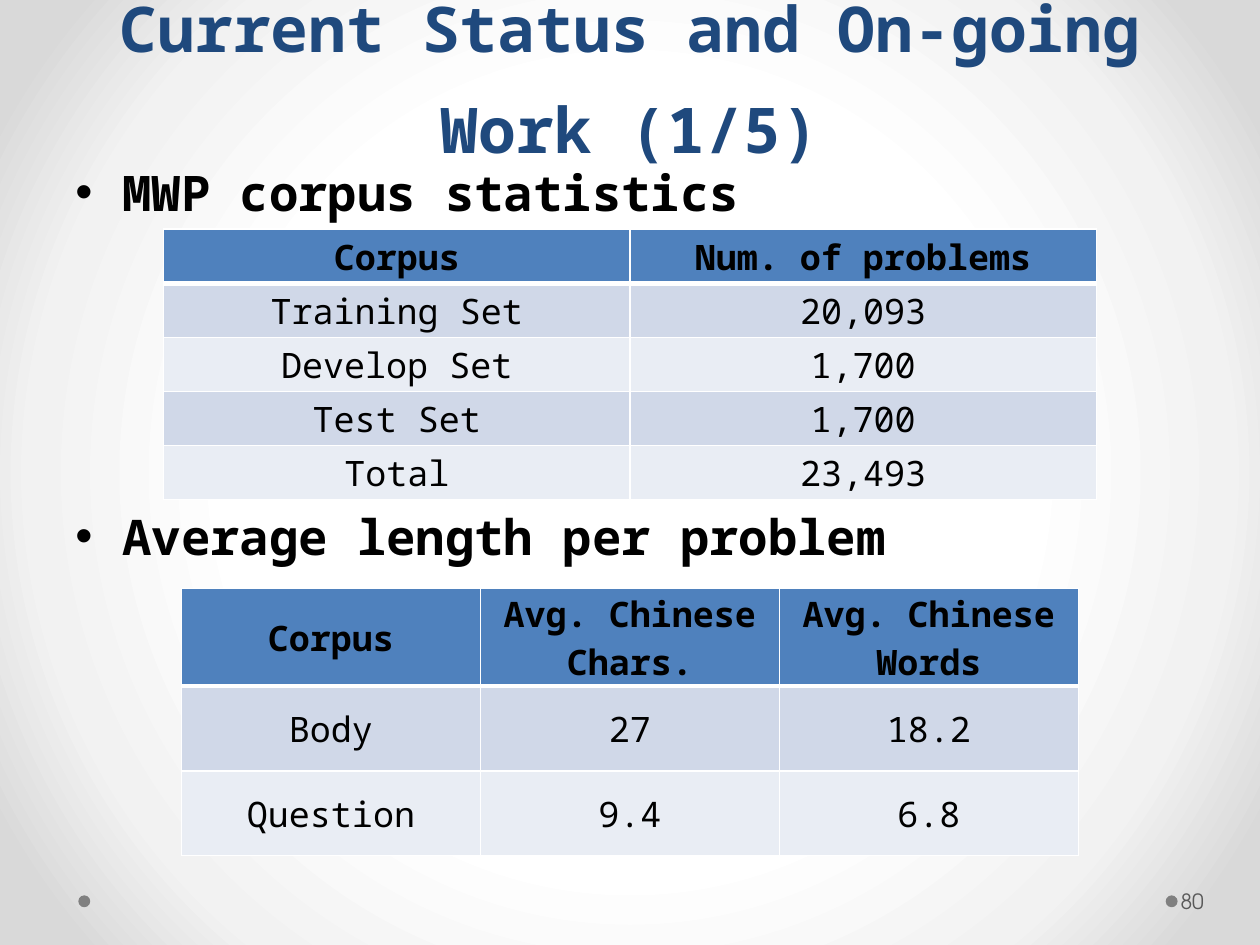
from pptx import Presentation
from pptx.dml.color import RGBColor
from pptx.enum.shapes import MSO_SHAPE
from pptx.enum.text import MSO_ANCHOR as ANCHOR, PP_ALIGN as ALIGN
from pptx.oxml import parse_xml
from pptx.oxml.ns import nsdecls
from pptx.util import Cm, Pt

WHITE = RGBColor(0xFF, 0xFF, 0xFF)
PALE = RGBColor(0xF2, 0xF2, 0xF2)
SILVER = RGBColor(0xD9, 0xD9, 0xD9)
GREY = RGBColor(0x80, 0x80, 0x80)
DARK_GREY = RGBColor(0x59, 0x59, 0x59)
BLACK = RGBColor(0, 0, 0)
NAVY = RGBColor(0x1F, 0x49, 0x7D)
HEADER = RGBColor(0x4F, 0x81, 0xBD)
BANDS = (RGBColor(0xD0, 0xD8, 0xE8), RGBColor(0xE9, 0xED, 0xF4))

MONO = "Noto Sans Mono"
TITLE = dict(name=MONO, size=Pt(36), bold=True, color=NAVY)
BULLET = dict(name=MONO, size=Pt(28), bold=True, color=BLACK)
HEAD_CELL = dict(name=MONO, size=Pt(20), bold=True, color=BLACK)
BODY_CELL = dict(HEAD_CELL, bold=False)
NUMBER = dict(name="TeX Gyre Adventor", size=Pt(12), bold=False, color=DARK_GREY)

CORPUS_SIZES = [
    ("Corpus", "Num. of problems"),
    ("Training Set", "20,093"),
    ("Develop Set", "1,700"),
    ("Test Set", "1,700"),
    ("Total", "23,493"),
]
AVERAGE_LENGTHS = [
    ("Corpus", "Avg. Chinese Chars.", "Avg. Chinese Words"),
    ("Body", "27", "18.2"),
    ("Question", "9.4", "6.8"),
]


def set_background(s):
    """Radial gradient, white in the middle and grey in the corners."""
    s.background.fill.solid()
    stops = "".join(
        f'<a:gs pos="{pos}000"><a:srgbClr val="{color}"/></a:gs>'
        for pos, color in ((50, WHITE), (76, PALE), (92, SILVER)))
    gradient = parse_xml(
        f'<a:gradFill {nsdecls("a")}><a:gsLst>{stops}</a:gsLst><a:path path="circle">'
        '<a:fillToRect l="50000" t="50000" r="50000" b="50000"/></a:path></a:gradFill>')
    solid = s.element.xpath(".//p:bgPr/a:solidFill")[0]
    solid.getparent().replace(solid, gradient)


def add_run(p, text, style):
    r = p.add_run()
    r.text = text
    for key, value in style.items():
        if key == "color":
            r.font.color.rgb = value
        else:
            setattr(r.font, key, value)


def add_box(s, left, top, width, height, anchor=ANCHOR.TOP):
    tf = s.shapes.add_textbox(Cm(left), Cm(top), Cm(width), Cm(height)).text_frame
    tf.word_wrap = True
    tf.vertical_anchor = anchor
    return tf


def add_bullets(tf, items, gap):
    for i, text in enumerate(items):
        p = tf.add_paragraph() if i else tf.paragraphs[0]
        pPr = p._p.get_or_add_pPr()
        pPr.set("marL", str(Cm(0.95)))
        pPr.set("indent", str(-Cm(0.95)))
        for tag in ('buFont {} typeface="Arial"', 'buChar {} char="•"'):
            pPr.append(parse_xml(f'<a:{tag.format(nsdecls("a"))}/>'))
        if i:
            p.space_before = gap
        add_run(p, text, BULLET)


def add_dot(s, left):
    sp = s.shapes.add_shape(MSO_SHAPE.OVAL, Cm(left), Cm(18.05), Cm(0.24), Cm(0.24))
    sp.shadow.inherit = False
    sp.fill.solid()
    sp.fill.fore_color.rgb = GREY
    sp.line.fill.background()


def set_borders(cell, bottom):
    tcPr = cell._tc.get_or_add_tcPr()
    for i, (side, width) in enumerate((("L", 1), ("R", 1), ("T", 1), ("B", bottom))):
        tcPr.insert(i, parse_xml(
            f'<a:ln{side} {nsdecls("a")} w="{Pt(width)}"><a:solidFill>'
            f'<a:srgbClr val="{WHITE}"/></a:solidFill></a:ln{side}>'))


def add_table(s, rows, left, top, width, header_height, row_height):
    height = header_height + row_height * (len(rows) - 1)
    frame = s.shapes.add_table(len(rows), len(rows[0]), Cm(left), Cm(top),
                               Cm(width), Cm(height))
    for i, row in enumerate(rows):
        frame.table.rows[i].height = Cm(row_height if i else header_height)
        for j, text in enumerate(row):
            cell = frame.table.cell(i, j)
            cell.fill.solid()
            cell.fill.fore_color.rgb = BANDS[(i - 1) % 2] if i else HEADER
            layout = dict(margin_left=Cm(0.03), margin_right=Cm(0.03), margin_top=Cm(0.03),
                          margin_bottom=0, vertical_anchor=ANCHOR.MIDDLE)
            for key, value in layout.items():
                setattr(cell, key, value)
            set_borders(cell, bottom=1 if i else 3)
            p = cell.text_frame.paragraphs[0]
            p.alignment = ALIGN.CENTER
            add_run(p, text, BODY_CELL if i else HEAD_CELL)


def main():
    prs = Presentation()
    prs.slide_width, prs.slide_height = Cm(25.4), Cm(19.05)
    s = prs.slides.add_slide(prs.slide_layouts[6])
    set_background(s)

    # Footer dots
    for left in (23.5, 1.58):
        add_dot(s, left)

    # Title
    p = add_box(s, 1.27, 0, 22.86, 2.62, ANCHOR.MIDDLE).paragraphs[0]
    p.alignment = ALIGN.CENTER
    p.line_spacing = Pt(58)
    add_run(p, "Current Status and On-going Work (1/5)", TITLE)

    # Bullets, with room for the first table between them
    body = add_box(s, 1.27, 3.15, 22.86, 13.87)
    add_bullets(body, ["MWP corpus statistics", "Average length per problem"], Pt(163))

    # Page number
    tf = add_box(s, 23.72, 17.65, 1.55, 1.02, ANCHOR.MIDDLE)
    tf.margin_left = Cm(0.08)
    tf.margin_right = Cm(0.13)
    add_run(tf.paragraphs[0], "80", NUMBER)

    # Tables; the second has a header of two lines
    add_table(s, CORPUS_SIZES, 3.3, 4.62, 18.8, 1.09, 1.09)
    add_table(s, AVERAGE_LENGTHS, 3.66, 11.86, 18.08, 1.97, 1.71)

    prs.save("out.pptx")


if __name__ == "__main__":
    main()
